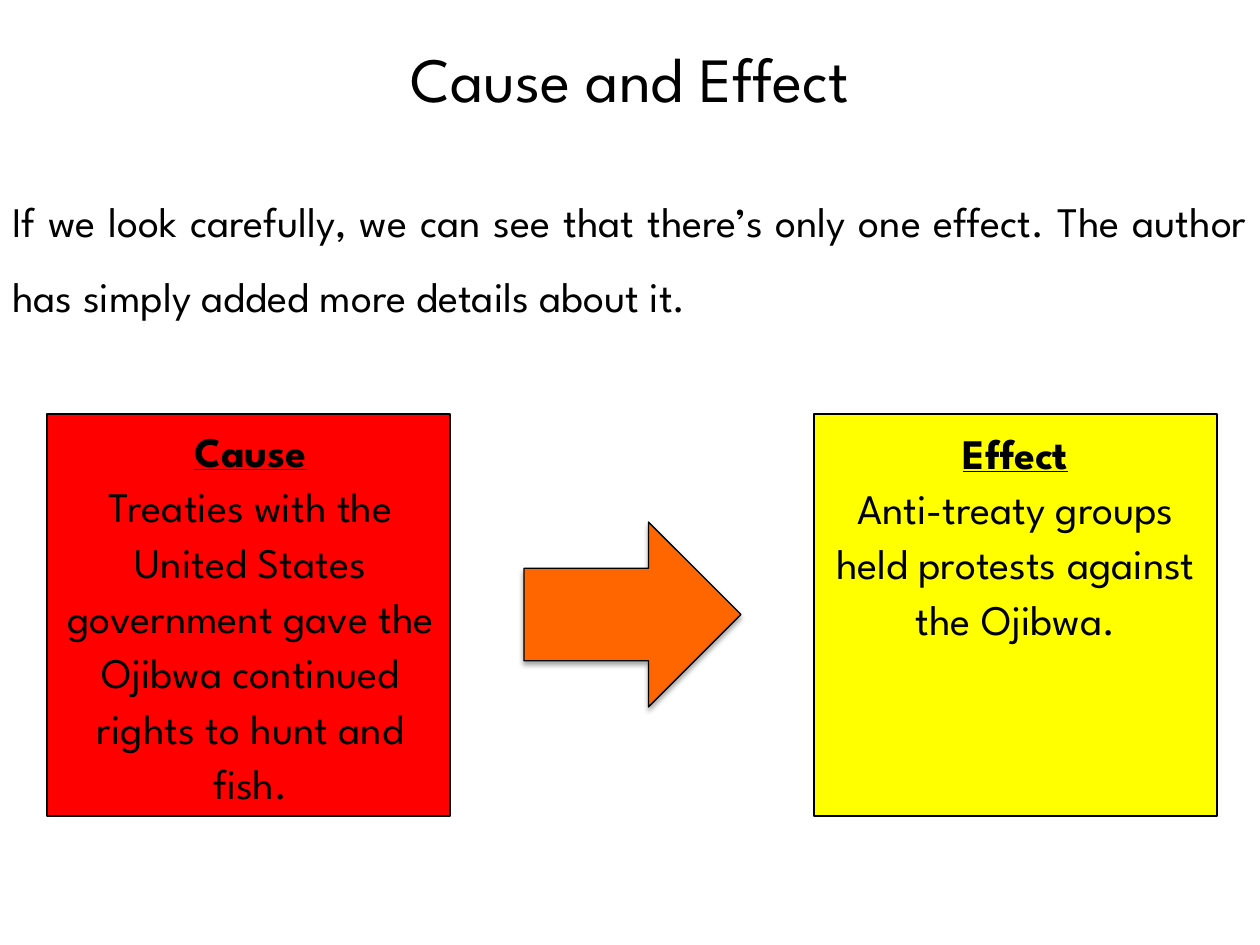
from dataclasses import dataclass

import lxml.etree
import pptx
import pptx.dml.color
import pptx.enum.shapes
import pptx.enum.text
import pptx.oxml.ns
import pptx.presentation
import pptx.shapes.autoshape
import pptx.slide
import pptx.text.text
import pptx.util

EMU_PER_PX = 914400 / 126
FONT = "League Spartan"
BLACK = "000000"
ALIGN = pptx.enum.text.PP_ALIGN
SHAPE = pptx.enum.shapes.MSO_SHAPE


@dataclass(frozen=True)
class Box:
    left: int
    top: int
    width: int
    height: int

    def emu(self) -> list[pptx.util.Emu]:
        return [px(n) for n in (self.left, self.top, self.width, self.height)]


@dataclass(frozen=True)
class Panel:
    heading: str
    detail: str
    fill: str
    box: Box
    text_box: Box


PANELS = [
    Panel(
        "Cause",
        "Treaties with the United States government gave the Ojibwa continued rights to hunt and fish.",
        "FF0000",
        Box(47, 414, 403, 402),
        Box(49, 414, 403, 403),
    ),
    Panel(
        "Effect",
        "Anti-treaty groups held protests against the Ojibwa.",
        "FFFF00",
        Box(814, 414, 403, 402),
        Box(814, 416, 403, 292),
    ),
]


def px(length: int) -> pptx.util.Emu:
    return pptx.util.Emu(round(length * EMU_PER_PX))


def color(value: str) -> pptx.dml.color.RGBColor:
    return pptx.dml.color.RGBColor.from_string(value)


def write(
    paragraph: pptx.text.text._Paragraph,
    text: str,
    *,
    size: int = 24,
    align: ALIGN = ALIGN.CENTER,
    spacing: float = 1.0,
    bold: bool = False,
    underline: bool = False,
) -> None:
    paragraph.alignment = align
    paragraph.line_spacing = spacing
    run = paragraph.add_run()
    run.text = text
    run.font.name = FONT
    run.font.size = pptx.util.Pt(size)
    run.font.bold = bold
    run.font.underline = underline
    run.font.color.rgb = color(BLACK)


def prepare_frame(frame: pptx.text.text.TextFrame) -> pptx.text.text.TextFrame:
    frame.word_wrap = True
    frame.auto_size = pptx.enum.text.MSO_AUTO_SIZE.NONE
    frame.vertical_anchor = pptx.enum.text.MSO_ANCHOR.TOP
    return frame


def draw_shape(shapes, kind: SHAPE, box: Box, fill: str) -> pptx.shapes.autoshape.Shape:
    shape = shapes.add_shape(kind, *box.emu())
    shape.shadow.inherit = False
    shape.fill.solid()
    shape.fill.fore_color.rgb = color(fill)
    shape.line.color.rgb = color(BLACK)
    shape.line.width = pptx.util.Pt(0.75)
    return shape


def add_soft_shadow(shape: pptx.shapes.autoshape.Shape) -> None:
    qn = pptx.oxml.ns.qn
    effects = shape.element.spPr.find(qn("a:effectLst"))
    shadow = lxml.etree.SubElement(
        effects,
        qn("a:outerShdw"),
        blurRad=str(pptx.util.Pt(3.1)),
        dist=str(pptx.util.Pt(1.8)),
        dir="5400000",
        rotWithShape="0",
    )
    tint = lxml.etree.SubElement(shadow, qn("a:srgbClr"), val=BLACK)
    lxml.etree.SubElement(tint, qn("a:alpha"), val="35000")


def draw_panel(slide: pptx.slide.Slide, panel: Panel) -> None:
    group = slide.shapes.add_group_shape()
    draw_shape(group.shapes, SHAPE.RECTANGLE, panel.box, panel.fill)
    frame = prepare_frame(group.shapes.add_textbox(*panel.text_box.emu()).text_frame)
    write(frame.paragraphs[0], panel.heading, spacing=1.1, bold=True, underline=True)
    write(frame.add_paragraph(), panel.detail, spacing=1.1)


def main() -> None:
    deck = pptx.Presentation()
    deck.slide_width, deck.slide_height = px(1260), px(945)
    slide = deck.slides.add_slide(deck.slide_layouts[5])

    title = slide.shapes.title
    title.left, title.top, title.width, title.height = Box(0, 33, 1260, 89).emu()
    write(prepare_frame(title.text_frame).paragraphs[0], "Cause and Effect", size=36)

    explanation = slide.shapes.add_textbox(*Box(0, 164, 1260, 161).emu())
    write(
        prepare_frame(explanation.text_frame).paragraphs[0],
        "If we look carefully, we can see that there’s only one effect. "
        "The author has simply added more details about it.",
        align=ALIGN.JUSTIFY,
        spacing=1.5,
    )

    arrow = draw_shape(slide.shapes, SHAPE.RIGHT_ARROW, Box(524, 522, 217, 185), "FF6600")
    add_soft_shadow(arrow)

    for panel in PANELS:
        draw_panel(slide, panel)

    deck.save("out.pptx")


if __name__ == "__main__":
    main()
